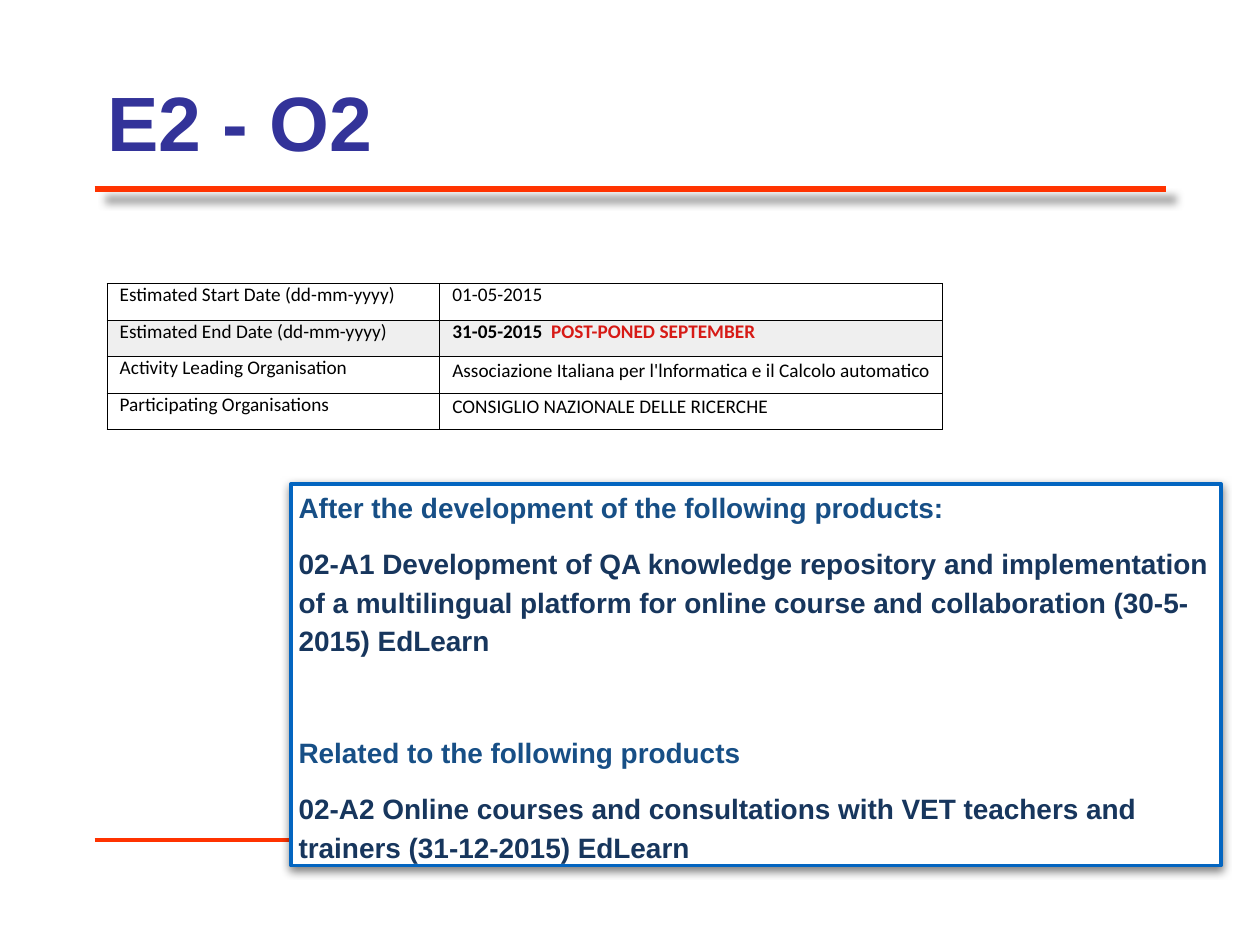
from lxml.etree import SubElement
from pptx import Presentation
from pptx.dml.color import RGBColor
from pptx.enum.shapes import MSO_CONNECTOR, MSO_SHAPE
from pptx.enum.text import MSO_ANCHOR, PP_ALIGN
from pptx.oxml.ns import qn
from pptx.util import Inches, Pt

ORANGE = RGBColor(0xFF, 0x33, 0x00)
INDIGO = RGBColor(0x33, 0x33, 0x99)
BORDER_BLUE = RGBColor(0x03, 0x65, 0xC0)
HEADING_BLUE = RGBColor(0x17, 0x4F, 0x86)
NAVY = RGBColor(0x17, 0x36, 0x5D)
RED = RGBColor(0xD7, 0x1A, 0x16)
BAND_GREY = RGBColor(0xEF, 0xEF, 0xEF)
BLACK = RGBColor(0, 0, 0)
WHITE = RGBColor(0xFF, 0xFF, 0xFF)
MARGIN = Inches(0.06)


def add_shadow(effects, color, opacity, blur, distance, angle):
    shadow = SubElement(effects, qn("a:outerShdw"), blurRad=str(Pt(blur)),
                        dist=str(Pt(distance)), dir=str(angle * 60000),
                        algn="tl", rotWithShape="0")
    tint = SubElement(shadow, qn("a:srgbClr"), val=color)
    SubElement(tint, qn("a:alpha"), val=str(opacity * 1000))


def set_margins(area):
    area.margin_left = area.margin_right = MARGIN
    area.margin_top = area.margin_bottom = MARGIN


prs = Presentation()
prs.slide_width, prs.slide_height = Inches(10), Inches(7.5)
slide = prs.slides.add_slide(prs.slide_layouts[5])

# Title
title = slide.shapes.title
title.left, title.top = Inches(0.75), Inches(0.08)
title.width, title.height = Inches(8.5), Inches(1.75)
title_frame = title.text_frame
set_margins(title_frame)
title_frame.vertical_anchor = MSO_ANCHOR.MIDDLE
title_frame.text = "E2 - O2"
heading = title_frame.paragraphs[0]
heading.alignment = PP_ALIGN.LEFT
heading._p.get_or_add_pPr().set("marL", str(Inches(0.04)))
heading.font.name = "Arial"
heading.font.size = Pt(44)
heading.font.bold = True
heading.font.color.rgb = INDIGO

# Rules under the title and above the footer
for y, weight, shaded in [(1.5, 3, True), (6.67, 2.25, False)]:
    rule = slide.shapes.add_connector(MSO_CONNECTOR.STRAIGHT, Inches(0.75), Inches(y),
                                      Inches(9.25), Inches(y))
    rule.line.color.rgb = ORANGE
    rule.line.width = Pt(weight)
    effects = SubElement(rule._element.spPr, qn("a:effectLst"))
    if shaded:
        add_shadow(effects, "808080", 100, 5, 8, 45)

# Products box
products = slide.shapes.add_shape(MSO_SHAPE.RECTANGLE, Inches(2.31), Inches(3.84),
                                  Inches(7.38), Inches(3.03))
products.fill.solid()
products.fill.fore_color.rgb = WHITE
products.line.color.rgb = BORDER_BLUE
products.line.width = Pt(2)
products.shadow.inherit = False
add_shadow(products._element.spPr.find(qn("a:effectLst")), "000000", 50, 5, 2, 90)

product_frame = products.text_frame
product_frame.word_wrap = True
product_frame.vertical_anchor = MSO_ANCHOR.MIDDLE
set_margins(product_frame)
product_lines = [
    ("After the development of the following products:", HEADING_BLUE, 0),
    ("02-A1 Development of QA knowledge repository and implementation of a multilingual "
     "platform for online course and collaboration (30-5-2015) EdLearn", NAVY, 10),
    ("Related to the following products", HEADING_BLUE, 42),
    ("02-A2 Online courses and consultations with VET teachers and trainers "
     "(31-12-2015) EdLearn", NAVY, 10),
]
for i, (text, color, gap) in enumerate(product_lines):
    line = product_frame.paragraphs[0] if i == 0 else product_frame.add_paragraph()
    line.text = text
    line.alignment = PP_ALIGN.LEFT
    line.line_spacing = 1.15
    line.space_before = Pt(gap)
    line.font.name = "Arial"
    line.font.size = Pt(16)
    line.font.bold = True
    line.font.color.rgb = color

# Activity table
rows = [
    ("Estimated Start Date (dd-mm-yyyy)", "01-05-2015"),
    ("Estimated End Date (dd-mm-yyyy)", "31-05-2015  "),
    ("Activity Leading Organisation",
     "Associazione Italiana per l'lnformatica e il Calcolo automatico"),
    ("Participating Organisations", "CONSIGLIO NAZIONALE DELLE RICERCHE"),
]
activity = slide.shapes.add_table(len(rows), 2, Inches(0.85), Inches(2.25),
                                  Inches(6.63), Inches(1.16)).table
activity.first_row = activity.horz_banding = False
activity.columns[0].width = Inches(2.64)
activity.columns[1].width = Inches(3.99)

for r, row in enumerate(rows):
    activity.rows[r].height = Inches(0.29)
    for c, text in enumerate(row):
        cell = activity.cell(r, c)
        set_margins(cell)
        centred = c == 1 and r >= 2
        cell.vertical_anchor = MSO_ANCHOR.MIDDLE if centred else MSO_ANCHOR.TOP
        for side in ("a:lnL", "a:lnR", "a:lnT", "a:lnB"):
            border = SubElement(cell._tc.get_or_add_tcPr(), qn(side), w=str(Pt(0.5)))
            SubElement(SubElement(border, qn("a:solidFill")), qn("a:srgbClr"), val="000000")
        if r == 1:
            cell.fill.solid()
            cell.fill.fore_color.rgb = BAND_GREY
        else:
            cell.fill.background()
        entry = cell.text_frame.paragraphs[0]
        entry.text = text
        entry._p.get_or_add_pPr().set("marL", str(Inches(0.04)))
        entry.line_spacing = Pt(9)
        entry.font.name = "Calibri"
        entry.font.size = Pt(11)
        entry.font.bold = (r, c) == (1, 1)
        entry.font.color.rgb = BLACK

# Postponement note beside the end date
note = activity.cell(1, 1).text_frame.paragraphs[0].add_run()
note.text = "POST-PONED SEPTEMBER"
note.font.color.rgb = RED

prs.save("out.pptx")
